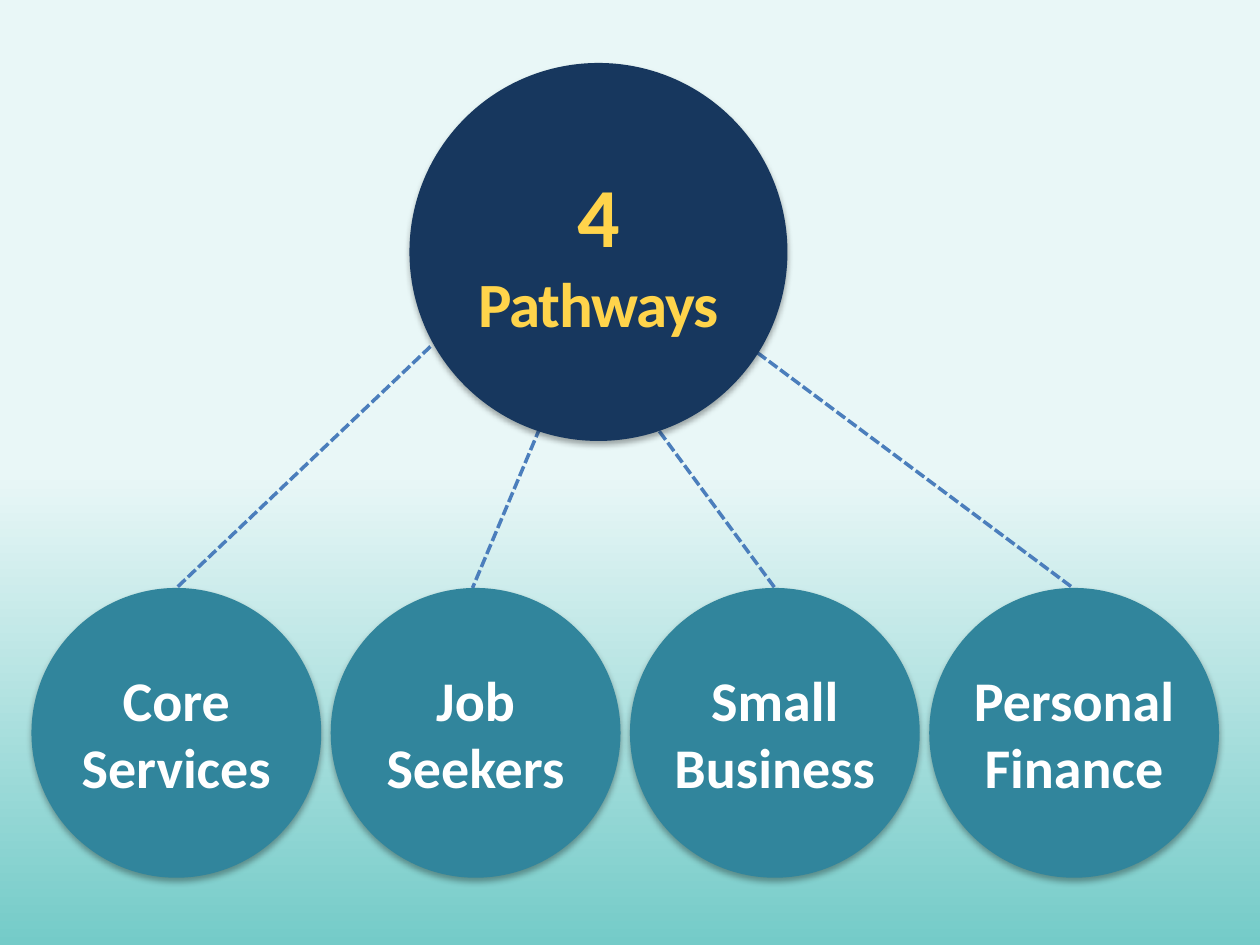
from dataclasses import dataclass

from lxml import etree
from pptx import Presentation
from pptx import util as u
from pptx.dml.color import RGBColor
from pptx.enum import dml, shapes, text
from pptx.oxml.ns import qn

COLS, ROWS = 120, 90
WIDE, HIGH = u.Inches(10), u.Inches(7.5)
TOP, PITCH = 56, 28.5
HUES = {
    "base": "74CBC8",
    "sky": "E9F7F7",
    "hub": "17375E",
    "node": "31859C",
    "link": "4B7EBC",
    "gold": "FFD44B",
    "white": "FFFFFF",
    "shade": "000000",
}


@dataclass
class Run:
    words: str
    size: float
    track: float = 0


@dataclass
class Disc:
    col: float
    row: float
    span: float
    fill: str
    ink: str
    runs: list[Run]
    inset: float = 0.1


@dataclass
class Link:
    col: float
    row: float
    end: float


def hue(name: str) -> RGBColor:
    return RGBColor.from_string(HUES[name])


def across(cols: float) -> int:
    return round(WIDE * cols / COLS)


def down(rows: float) -> int:
    return round(HIGH * rows / ROWS)


def paint(slide) -> None:
    fill = slide.background.fill
    fill.gradient()
    fill.gradient_angle = 90
    for stop, name, place in zip(fill.gradient_stops, ("base", "sky"), (0, 0.5)):
        stop.color.rgb = hue(name)
        stop.position = place


def join(slide, link: Link) -> None:
    line = slide.shapes.add_connector(
        shapes.MSO_CONNECTOR.STRAIGHT,
        across(link.col), down(link.row), across(link.end), down(TOP),
    )
    line.line.color.rgb = hue("link")
    line.line.width = u.Pt(2)
    line.line.dash_style = dml.MSO_LINE.SQUARE_DOT
    etree.SubElement(line._element.spPr, qn("a:effectLst"))


def shade(shape) -> None:
    shape.shadow.inherit = False
    effects = shape._element.spPr.find(qn("a:effectLst"))
    outer = etree.SubElement(
        effects, qn("a:outerShdw"), blurRad=str(u.Pt(3.5)), dist=str(u.Pt(2.2)),
        dir="5400000", rotWithShape="0",
    )
    tint = etree.SubElement(outer, qn("a:srgbClr"), val=HUES["shade"])
    etree.SubElement(tint, qn("a:alpha"), val="32000")


def draw(slide, disc: Disc) -> None:
    shape = slide.shapes.add_shape(
        shapes.MSO_SHAPE.OVAL,
        across(disc.col), down(disc.row), across(disc.span), down(disc.span),
    )
    shape.fill.solid()
    shape.fill.fore_color.rgb = hue(disc.fill)
    shape.line.fill.background()
    shade(shape)
    frame = shape.text_frame
    frame.word_wrap = True
    frame.vertical_anchor = text.MSO_ANCHOR.MIDDLE
    frame.margin_left = frame.margin_right = u.Inches(disc.inset)
    para = frame.paragraphs[0]
    para.alignment = text.PP_ALIGN.CENTER
    font = para.font
    font.name, font.bold, font.color.rgb = "Calibri", True, hue(disc.ink)
    if len({part.size for part in disc.runs}) == 1:
        font.size = u.Pt(disc.runs[0].size)
    for part in disc.runs:
        run = para.add_run()
        run.text = part.words
        if font.size is None:
            run.font.size = u.Pt(part.size)
        if part.track:
            run.font._element.set("spc", str(round(part.track * 100)))


def main() -> None:
    deck = Presentation()
    deck.slide_width, deck.slide_height = WIDE, HIGH
    slide = deck.slides.add_slide(deck.slide_layouts[6])
    paint(slide)
    links = [
        Link(41, 33, 16.8),
        Link(53, 37, 45),
        Link(62, 40, 73.8),
        Link(70, 32, 102.2),
    ]
    for link in links:
        join(slide, link)
    title = [Run("4", 48), Run(" ", 36), Run("Pathways", 36, -0.7)]
    draw(slide, Disc(39, 6, 36, "hub", "gold", title))
    paths = ["Core Services", "Job Seekers", "Small Business", "Personal Finance"]
    for spot, name in enumerate(paths):
        draw(slide, Disc(3 + spot * PITCH, TOP, 27.6, "node", "white", [Run(name, 32)], 0))
    deck.save("out.pptx")


if __name__ == "__main__":
    main()
